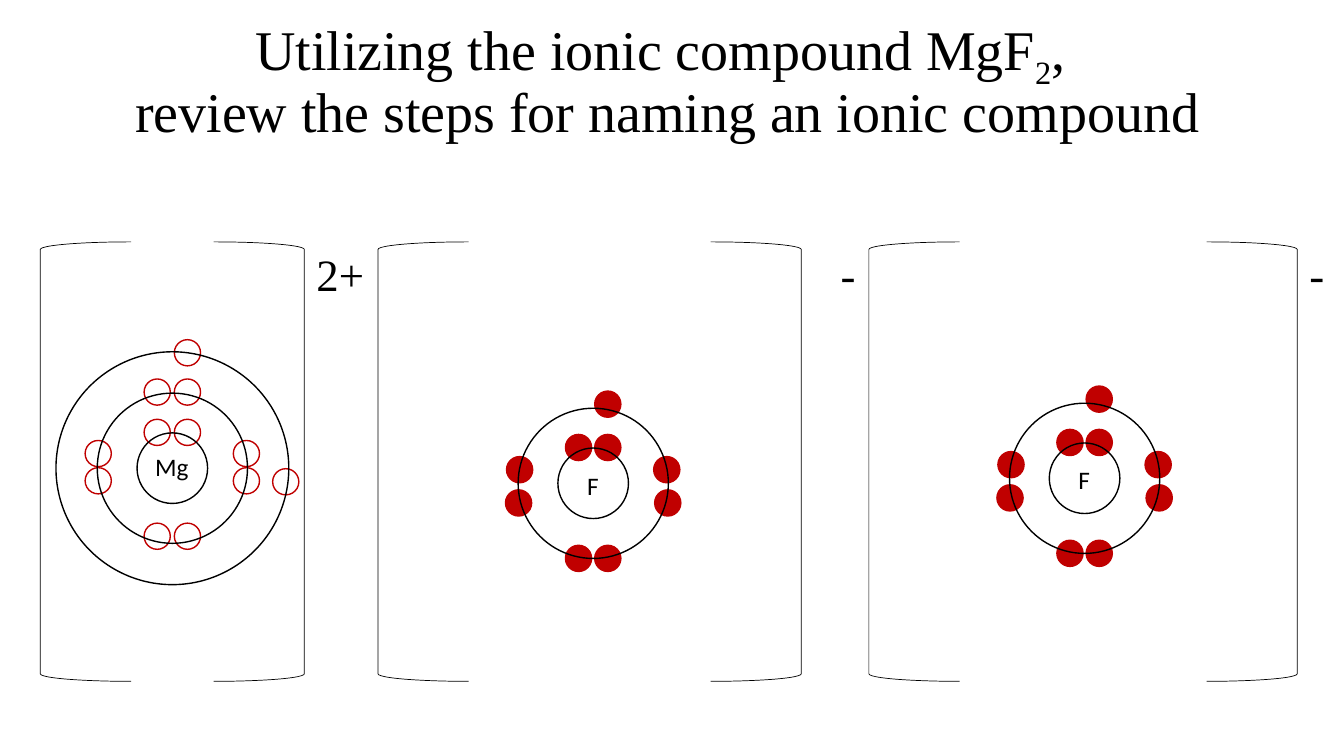
from dataclasses import dataclass

from pptx import Presentation
from pptx.dml.color import RGBColor
from pptx.enum.shapes import MSO_SHAPE as Preset
from pptx.enum.text import MSO_ANCHOR as Anchor, MSO_AUTO_SIZE as AutoSize, PP_ALIGN as Align
from pptx.shapes.autoshape import Shape
from pptx.slide import Slide
from pptx.text.text import TextFrame
from pptx.util import Inches, Pt

# The grid has square cells, ten to the inch
CELL = Inches(0.1)
COLUMNS, ROWS = 133.33, 75


@dataclass(frozen=True)
class Theme:
    black: RGBColor = RGBColor(0, 0, 0)
    white: RGBColor = RGBColor(255, 255, 255)
    red: RGBColor = RGBColor(0xC0, 0, 0)
    serif: str = "Times New Roman"
    sans: str = "Calibri"
    title_size: int = 40
    charge_size: int = 32
    symbol_size: int = 18
    ring_line: float = 1
    bracket_line: float = 0.5


@dataclass(frozen=True)
class Box:
    column: float
    row: float
    width: float
    height: float

    def lengths(self) -> list[int]:
        return [round(value * CELL) for value in (self.column, self.row, self.width, self.height)]


@dataclass(frozen=True)
class Point:
    column: float
    row: float

    def around(self, width: float, height: float) -> Box:
        return Box(self.column - width / 2, self.row - height / 2, width, height)

    def moved(self, offset: "Point") -> "Point":
        return Point(self.column + offset.column, self.row + offset.row)


@dataclass(frozen=True)
class Element:
    symbol: str
    label_width: float
    ring_widths: tuple[float, ...]
    electrons: tuple[Point, ...]
    electron_fill: RGBColor


@dataclass(frozen=True)
class Ion:
    element: Element
    nucleus: Point
    label_drop: float
    left_bracket: float
    right_bracket: float
    charge: str
    charge_column: float
    charge_width: float


def mirrored(column: float, row: float) -> tuple[Point, Point]:
    """Two electrons on either side of the nucleus."""
    return Point(-column, row), Point(column, row)


THEME = Theme()
ELECTRON_WIDTH = 2.6
BRACKET_ROW, BRACKET_WIDTH, BRACKET_HEIGHT = 24, 9, 43.6
TITLE_BOX = Box(0.7, 0.7, 131, 14.5)
SUBSCRIPT = -25000

MAGNESIUM = Element(
    "Mg", 5.4, (7, 14.9, 23.1),
    (*mirrored(1.5, -3.55), *mirrored(1.5, -7.55), *mirrored(1.5, 6.75),
     *mirrored(7.35, -1.45), *mirrored(7.35, 1.25),
     Point(1.5, -11.45), Point(11.25, 1.35)),
    THEME.white)
FLUORINE = Element(
    "F", 3.2, (7, 14.9),
    (*mirrored(1.45, -3.55), *mirrored(1.45, 7.45),
     *mirrored(7.3, -1.35), *mirrored(7.4, 1.95), Point(1.45, -7.85)),
    THEME.red)
IONS = (
    Ion(MAGNESIUM, Point(17.1, 46.45), -0.15, 4, 21.2, "2+", 30.4, 6.8),
    Ion(FLUORINE, Point(58.85, 47.95), 0.25, 37.5, 70.5, "-", 82.4, 3.5),
    Ion(FLUORINE, Point(107.6, 47.45), 0.15, 86.2, 119.7, "-", 128.9, 3.5),
)


def write_text(frame: TextFrame, *parts: tuple[str, int], font: str, size: float,
               align: Align = Align.LEFT, spacing: float = 1.0) -> None:
    """Write (text, baseline) parts in one paragraph; a newline is a line break."""
    paragraph = frame.paragraphs[0]
    paragraph.alignment = align
    paragraph.line_spacing = spacing
    for text, baseline in parts:
        for index, line in enumerate(text.split("\n")):
            if index:
                paragraph.add_line_break()
            run = paragraph.add_run()
            run.text = line
            run.font.name = font
            run.font.size = Pt(size)
            run.font.color.rgb = THEME.black
            if baseline:
                run._r.get_or_add_rPr().set("baseline", str(baseline))


def add_label(slide: Slide, box: Box, text: str, font: str, size: float) -> None:
    frame = slide.shapes.add_textbox(*box.lengths()).text_frame
    frame.word_wrap = False
    frame.auto_size = AutoSize.SHAPE_TO_FIT_TEXT
    write_text(frame, (text, 0), font=font, size=size)


def add_outline(slide: Slide, preset: Preset, box: Box, color: RGBColor, line_width: float,
                fill: RGBColor | None = None) -> Shape:
    shape = slide.shapes.add_shape(preset, *box.lengths())
    shape.shadow.inherit = False
    if fill is None:
        shape.fill.background()
    else:
        shape.fill.solid()
        shape.fill.fore_color.rgb = fill
    shape.line.color.rgb = color
    shape.line.width = Pt(line_width)
    return shape


def add_title(slide: Slide) -> None:
    title = slide.shapes.title
    title.left, title.top, title.width, title.height = TITLE_BOX.lengths()
    frame = title.text_frame
    frame.vertical_anchor = Anchor.MIDDLE
    frame.auto_size = AutoSize.NONE
    write_text(frame, ("Utilizing the ionic compound MgF", 0), ("2", SUBSCRIPT),
               (", \nreview the steps for naming an ionic compound", 0),
               font=THEME.serif, size=THEME.title_size, align=Align.CENTER, spacing=0.9)


def add_atom(slide: Slide, ion: Ion) -> None:
    element = ion.element
    label_center = ion.nucleus.moved(Point(0, ion.label_drop))
    add_label(slide, label_center.around(element.label_width, 4), element.symbol,
              THEME.sans, THEME.symbol_size)
    for electron in element.electrons:
        box = ion.nucleus.moved(electron).around(ELECTRON_WIDTH, ELECTRON_WIDTH)
        add_outline(slide, Preset.OVAL, box, THEME.red, THEME.ring_line, element.electron_fill)
    for width in element.ring_widths:
        add_outline(slide, Preset.OVAL, ion.nucleus.around(width, width),
                    THEME.black, THEME.ring_line)


def add_brackets(slide: Slide, ion: Ion) -> None:
    for column, flipped in ((ion.left_bracket, False), (ion.right_bracket, True)):
        box = Box(column, BRACKET_ROW, BRACKET_WIDTH, BRACKET_HEIGHT)
        bracket = add_outline(slide, Preset.LEFT_BRACKET, box, THEME.black, THEME.bracket_line)
        if flipped:
            bracket._element.spPr.get_or_add_xfrm().set("flipH", "1")
    add_label(slide, Box(ion.charge_column, BRACKET_ROW, ion.charge_width, 6.4), ion.charge,
              THEME.serif, THEME.charge_size)


def main() -> None:
    presentation = Presentation()
    presentation.slide_width = round(COLUMNS * CELL)
    presentation.slide_height = ROWS * CELL
    slide = presentation.slides.add_slide(presentation.slide_layouts[5])

    # Heading
    add_title(slide)

    # Ions with their brackets and charges
    for ion in IONS:
        add_atom(slide, ion)
        add_brackets(slide, ion)

    presentation.save("out.pptx")


if __name__ == "__main__":
    main()
